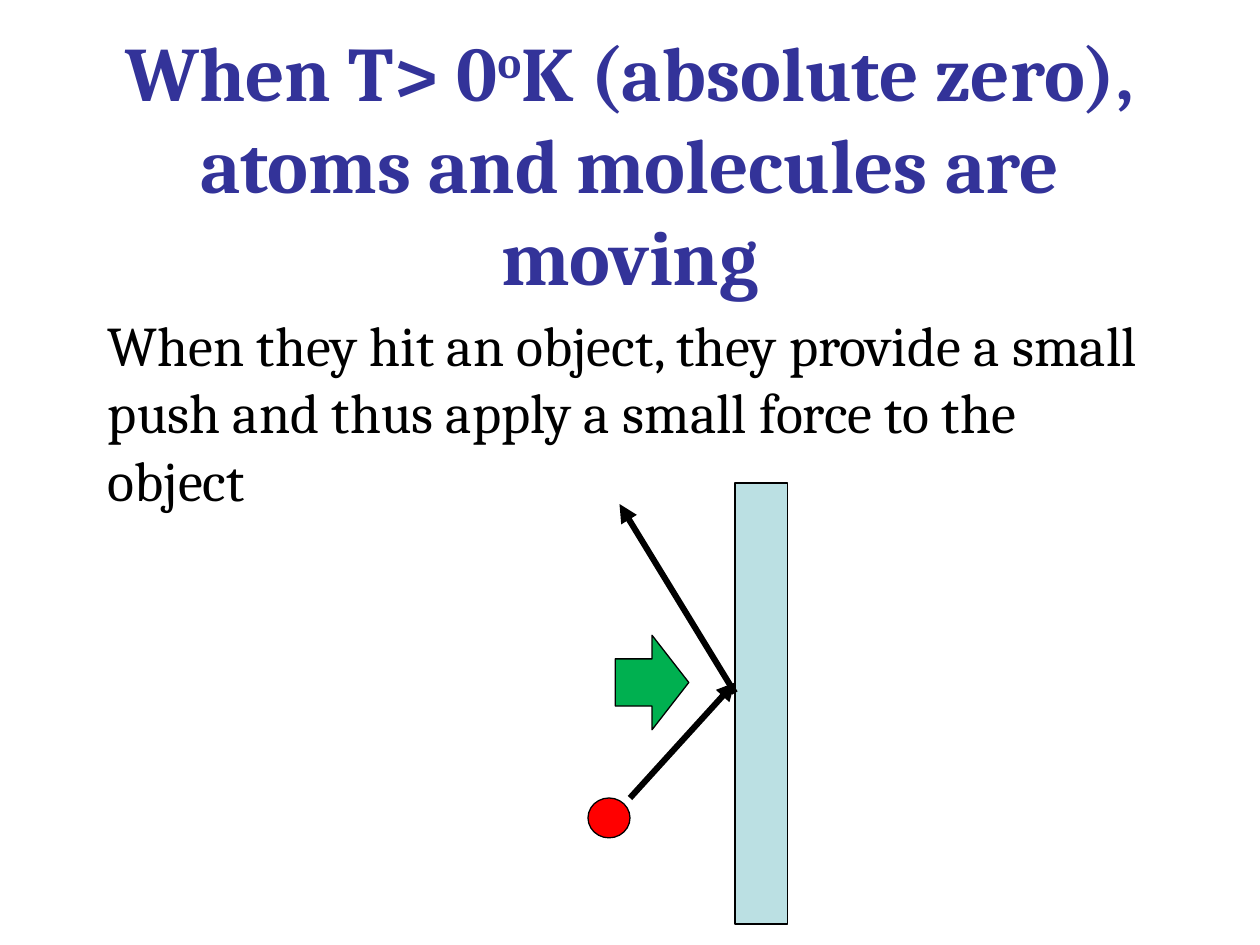
from lxml import etree
from pptx import Presentation
from pptx.dml.color import RGBColor
from pptx.enum.shapes import MSO_CONNECTOR, MSO_SHAPE
from pptx.enum.text import MSO_ANCHOR, MSO_AUTO_SIZE, PP_ALIGN
from pptx.oxml.ns import qn
from pptx.util import Inches, Pt

RECTANGLE = MSO_SHAPE.RECTANGLE
OVAL = MSO_SHAPE.OVAL
UP_ARROW = MSO_SHAPE.UP_ARROW
STRAIGHT = MSO_CONNECTOR.STRAIGHT
CENTER = PP_ALIGN.CENTER
LEFT = PP_ALIGN.LEFT
MIDDLE = MSO_ANCHOR.MIDDLE
TOP = MSO_ANCHOR.TOP
NO_AUTOFIT = MSO_AUTO_SIZE.NONE

TITLE_ONLY_LAYOUT = 5
CELLS_PER_INCH = 12
FONT = "Cambria"
BLACK = "000000"
TITLE_BLUE = "333399"
WALL_BLUE = "BBE0E3"
MOLECULE_RED = "FF0000"
PUSH_GREEN = "00B050"


def cells(*counts):
    return [Inches(count / CELLS_PER_INCH) for count in counts]


def color(value):
    return RGBColor.from_string(value)


def format_frame(text_frame, anchor, alignment):
    text_frame.word_wrap = True
    text_frame.auto_size = NO_AUTOFIT
    text_frame.vertical_anchor = anchor
    paragraph = text_frame.paragraphs[0]
    paragraph.alignment = alignment
    return paragraph


def add_run(paragraph, text, size, text_color, bold=False, baseline=None):
    run = paragraph.add_run()
    run.text = text
    run.font.name = FONT
    run.font.size = Pt(size)
    run.font.bold = bold
    run.font.color.rgb = color(text_color)
    if baseline is not None:
        run._r.get_or_add_rPr().set("baseline", str(baseline * 1000))


def fill_title(slide):
    title = slide.shapes.title
    title.left, title.top, title.width, title.height = cells(9, 8, 102, 15)
    paragraph = format_frame(title.text_frame, MIDDLE, CENTER)
    add_run(paragraph, "When T> 0", 44, TITLE_BLUE, bold=True)
    add_run(paragraph, "o", 44, TITLE_BLUE, bold=True, baseline=30)
    add_run(paragraph, "K (absolute zero), atoms and molecules are moving",
            44, TITLE_BLUE, bold=True)


def add_body(slide, text):
    box = slide.shapes.add_textbox(*cells(9.1, 29, 102, 54))
    paragraph = format_frame(box.text_frame, TOP, LEFT)
    add_run(paragraph, text, 32, BLACK)


def add_outlined_shape(slide, kind, area, fill, rotation=0):
    shape = slide.shapes.add_shape(kind, *cells(*area))
    shape.shadow.inherit = False
    shape.fill.solid()
    shape.fill.fore_color.rgb = color(fill)
    shape.line.color.rgb = color(BLACK)
    shape.line.width = Pt(0.75)
    shape.rotation = rotation


def add_motion_arrow(slide, start, end):
    connector = slide.shapes.add_connector(STRAIGHT, *cells(*start, *end))
    connector.line.color.rgb = color(BLACK)
    connector.line.width = Pt(3.5)
    line = connector.line._get_or_add_ln()
    etree.SubElement(line, qn("a:tailEnd"), type="triangle")
    etree.SubElement(connector._element.spPr, qn("a:effectLst"))


def main():
    presentation = Presentation()
    presentation.slide_width, presentation.slide_height = cells(120, 90)
    layout = presentation.slide_layouts[TITLE_ONLY_LAYOUT]
    slide = presentation.slides.add_slide(layout)

    fill_title(slide)
    add_body(slide, "When they hit an object, they provide a small push "
                    "and thus apply a small force to the object")
    add_outlined_shape(slide, RECTANGLE, (70, 46, 5, 42), WALL_BLUE)
    add_outlined_shape(slide, OVAL, (56, 76, 4, 3.8), MOLECULE_RED)
    add_motion_arrow(slide, (60, 76), (70, 65))
    add_motion_arrow(slide, (70, 66), (59, 48))
    add_outlined_shape(slide, UP_ARROW, (57.6, 61.5, 9, 7), PUSH_GREEN, rotation=90)

    presentation.save("out.pptx")


if __name__ == "__main__":
    main()
